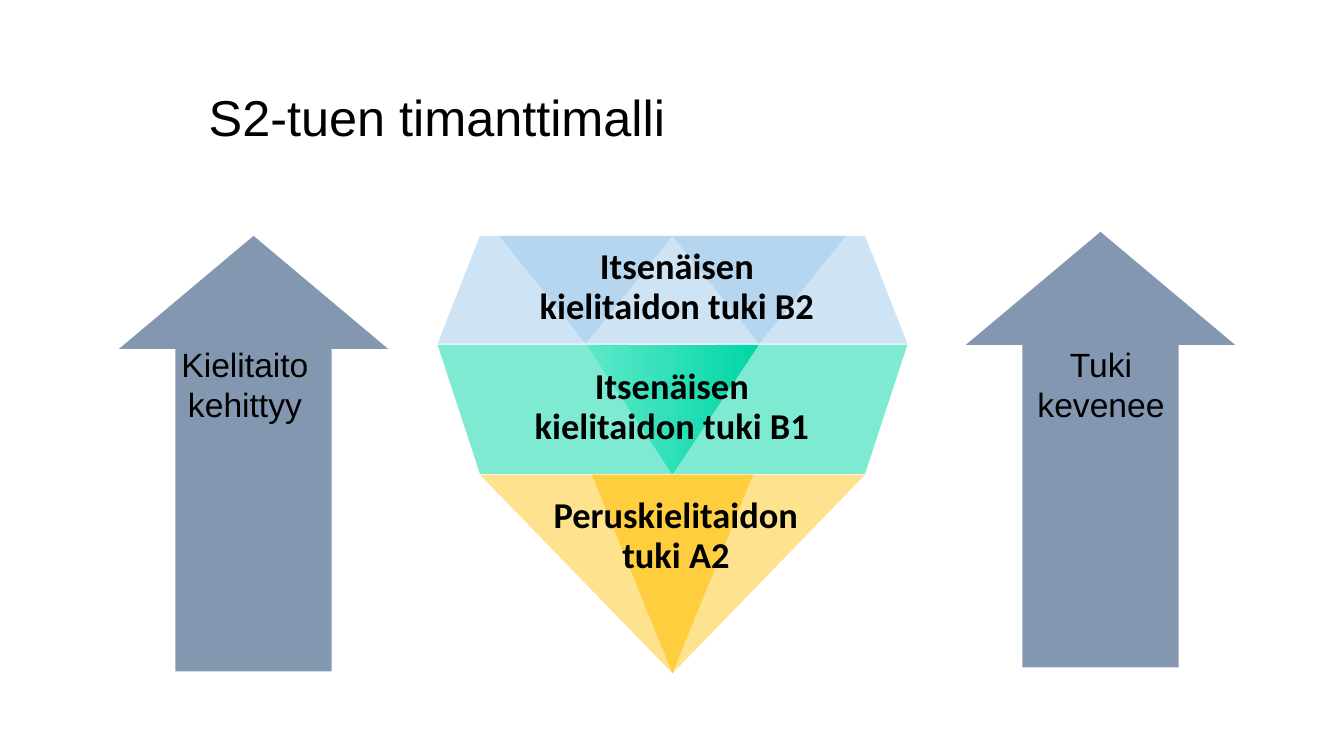
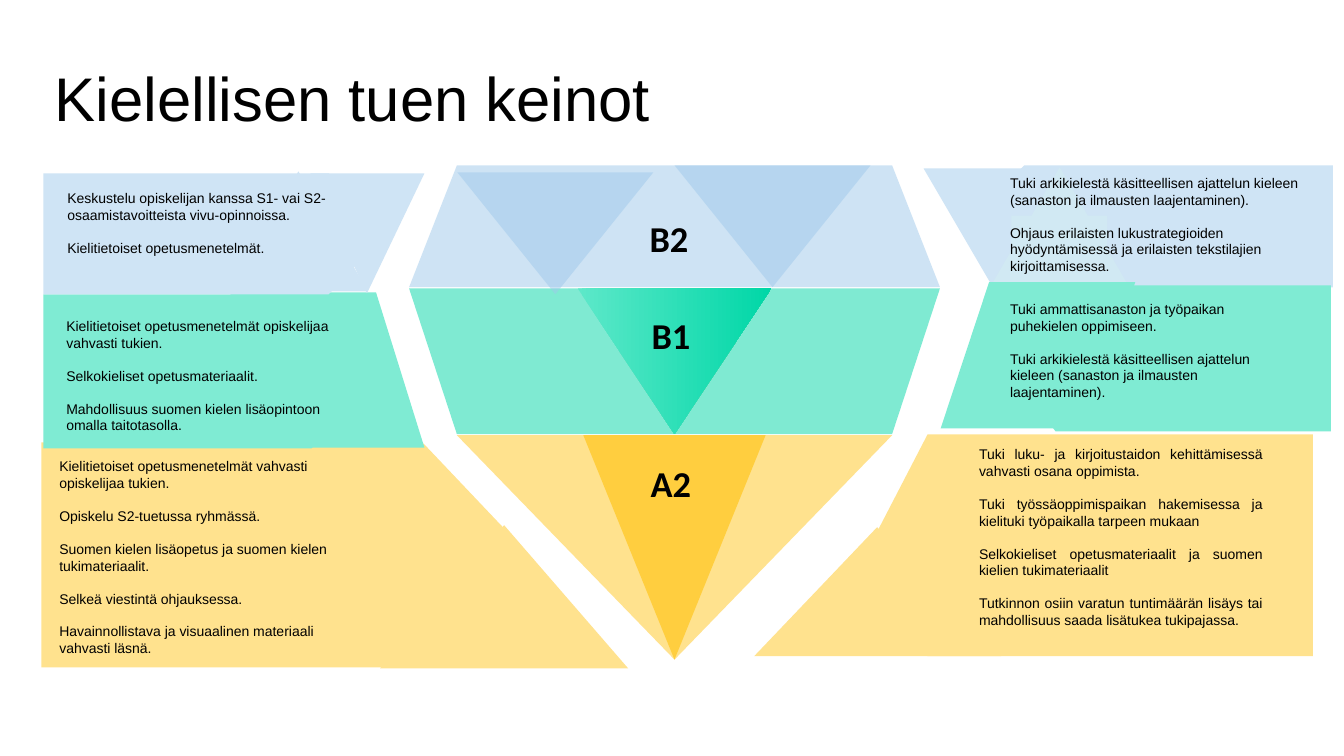
import pptx
import pptx.util
import pptx.dml.color
import pptx.enum.shapes
import pptx.enum.text
import pptx.oxml
import pptx.oxml.ns

Inches, Pt = pptx.util.Inches, pptx.util.Pt
RGB = pptx.dml.color.RGBColor
SHAPE = pptx.enum.shapes.MSO_SHAPE
ALIGN = pptx.enum.text.PP_ALIGN
ANCHOR = pptx.enum.text.MSO_ANCHOR

# Colours
BLACK = RGB(0x00, 0x00, 0x00)
STEEL = RGB(0x84, 0x97, 0xB0)
GOLD = RGB(0xFF, 0xC6, 0x1E)
GREEN = RGB(0x00, 0xD7, 0xA7)
LIME = RGB(0x5D, 0xE8, 0xC9)
BLUE = RGB(0x9F, 0xC9, 0xEB)
CREAM = RGB(0xFF, 0xE2, 0x8E)
MINT = RGB(0x7F, 0xEB, 0xD3)
SKY = RGB(0xCF, 0xE4, 0xF5)
ICE = RGB(0xD1, 0xE9, 0xF3)


def paint(shape, color, alpha=100):
    """Give a shape a flat fill without line or shadow."""
    shape.shadow.inherit = False
    shape.line.fill.background()
    shape.fill.solid()
    shape.fill.fore_color.rgb = color
    if alpha < 100:
        tint = shape.fill._xPr.find(".//" + pptx.oxml.ns.qn("a:srgbClr"))
        tint.append(pptx.oxml.parse_xml(
            f'<a:alpha {pptx.oxml.ns.nsdecls("a")} val="{alpha * 1000}"/>'))


def write(slide, box, lines, size, font="Arial", bold=False, align=ALIGN.LEFT,
          inset=(0.1, 0.05), pitch=None, gap=0):
    """Add a text box with one paragraph per line."""
    frame = slide.shapes.add_textbox(*map(Inches, box)).text_frame
    frame.word_wrap = True
    frame.margin_left = frame.margin_right = Inches(inset[0])
    frame.margin_top = frame.margin_bottom = Inches(inset[1])
    frame.text = "\n".join(lines)
    for i, para in enumerate(frame.paragraphs):
        para.alignment = align
        if pitch:
            para.line_spacing = Pt(pitch)
        if i:
            para.space_before = Pt(gap)
        for run in para.runs:
            run.font.name, run.font.size = font, Pt(size)
            run.font.bold, run.font.color.rgb = bold, BLACK


deck = pptx.Presentation()
deck.slide_width, deck.slide_height = Inches(13.33), Inches(7.5)

# Titles
pages = []
for text, left, top, size in [("S2-tuen timanttimalli", 1.97, 0.47, 36),
                              ("Kielellisen tuen keinot", 0.44, 0.28, 44)]:
    slide = deck.slides.add_slide(deck.slide_layouts[5])
    pages.append(slide)
    title = slide.shapes.title
    title.left, title.top = Inches(left), Inches(top)
    title.width, title.height = Inches(11.5), Inches(1.45)
    frame = title.text_frame
    frame.text = text
    frame.auto_size = pptx.enum.text.MSO_AUTO_SIZE.NONE
    frame.vertical_anchor = ANCHOR.MIDDLE
    para = frame.paragraphs[0]
    para.alignment, para.line_spacing = ALIGN.LEFT, 0.9
    font = para.runs[0].font
    font.name, font.size, font.color.rgb = "Arial", Pt(size), BLACK
model, means = pages

# Diamond facets, measured from the middle of the top edge
facets = [
    (GOLD, 50, [(0, 4.34), (1.91, 2.37), (-1.91, 2.37)]),
    (GOLD, 70, [(0, 4.34), (0.8, 2.37), (-0.8, 2.37)]),
    (GREEN, 50, [(0.43, 1.08), (2.33, 1.08), (1.91, 2.36), (0, 2.36)]),
    (GREEN, 50, [(-0.43, 1.08), (-2.33, 1.08), (-1.91, 2.36), (0, 2.36)]),
    (GREEN, 100, [(0, 2.36), (0.85, 1.08), (-0.85, 1.08)]),
    (BLUE, 50, [(-1.91, 0), (1.91, 0), (2.33, 1.07), (-2.33, 1.07)]),
    (BLUE, 50, [(0.86, 1.07), (1.72, 0), (0, 0)]),
    (BLUE, 50, [(-0.86, 1.07), (0, 0), (-1.72, 0)]),
]

# Means slide: side panels, from back to front
panels = [
    (CREAM, [(9.2, 6.51), (13.02, 6.51), (13.02, 4.31), (9.2, 4.31), (8.63, 5.41)]),
    (CREAM, [(8.7, 5.23), (9.93, 6.51), (7.48, 6.51)]),
    (CREAM, [(9.29, 5.23), (10.4, 6.39), (8.18, 6.39)]),
    (CREAM, [(4.15, 4.39), (0.41, 4.39), (0.41, 6.62), (4.15, 6.62), (4.87, 5.5)]),
    (CREAM, [(5, 5.21), (6.23, 6.63), (3.77, 6.63)]),
    (CREAM, [(4.2, 4.4), (5.3, 5.56), (3.09, 5.56)]),
    (MINT, [(3.73, 2.9), (2.28, 2.9), (2.76, 4.44), (4.21, 4.44)]),
    (MINT, [(3.09, 2.92), (0.43, 2.92), (0.43, 4.45), (3.09, 4.45), (3.71, 3.69)]),
    (SKY, [(3.64, 2.91), (4.21, 1.72), (3.08, 1.72)]),
    (SKY, [(3.26, 1.72), (0.43, 1.72), (0.43, 2.92), (3.26, 2.92), (3.82, 2.32)]),
    (SKY, [(2.96, 1.7), (3.65, 2.89), (2.28, 2.89)]),
    (SKY, [(10.16, 2.85), (13.22, 2.85), (13.22, 1.64), (10.16, 1.64), (9.55, 2.25)]),
    (SKY, [(9.86, 2.87), (10.56, 1.67), (9.16, 1.67)]),
    (ICE, [(10.51, 1.66), (11.2, 2.85), (9.82, 2.85)]),
    (MINT, [(9.81, 2.8), (11.26, 2.8), (10.77, 4.25), (9.33, 4.25)]),
    (MINT, [(10.47, 4.28), (13.2, 4.28), (13.2, 2.83), (10.47, 2.83), (9.92, 3.56)]),
]

# Place the facets on both slides; the last one sits apart on the second
plan = []
for slide, mid, top, scale, shift in [(model, 6.67, 2.34, 1, (0, 0)),
                                      (means, 6.69, 1.64, 1.13, (-0.21, 0.07))]:
    for n, (color, alpha, points) in enumerate(facets, 1):
        dx, dy = shift if n == len(facets) else (0, 0)
        spots = [(mid + dx + x * scale, top + dy + y * scale) for x, y in points]
        plan.append((slide, color, alpha, spots))
plan += [(means, color, 100, points) for color, points in panels]

# Draw facets and panels
for slide, color, alpha, points in plan:
    spots = [(Inches(x), Inches(y)) for x, y in points]
    pen = slide.shapes.build_freeform(*spots[0])
    pen.add_line_segments(spots[1:], close=True)
    shape = pen.convert_to_shape()
    paint(shape, color, alpha)
    if color == GREEN and alpha == 100:
        shape.fill.gradient()
        shape.fill.gradient_angle = 0
        for stop, tone in zip(shape.fill.gradient_stops, (LIME, GREEN)):
            stop.color.rgb = tone
    if color == ICE:
        base = slide.shapes.add_shape(SHAPE.RECTANGLE, Inches(10.03), Inches(2.14),
                                      Inches(0.95), Inches(0.62))
        paint(base, ICE)

# Diamond labels
for slide, left, top, lines in [
        (model, 5.16, 4.92, ["Peruskielitaidon", "tuki A2"]),
        (model, 5.17, 2.45, ["Itsenäisen kielitaidon tuki B2"]),
        (model, 5.12, 3.64, ["Itsenäisen kielitaidon tuki B1"]),
        (means, 5.11, 4.61, ["A2"]),
        (means, 5.11, 3.14, ["B1"]),
        (means, 5.09, 2.18, ["B2"])]:
    write(slide, (left, top, 3.09, 0.41 * (1 if slide is means else 2)), lines, 26,
          "Calibri", True, ALIGN.CENTER, (0, 0), 28.5)

# Model slide: arrows
for left, top, edge, lines in [(9.58, 2.3, 10.02, ["Tuki", "kevenee"]),
                               (1.18, 2.34, 1.53, ["Kielitaito", "kehittyy"])]:
    arrow = model.shapes.add_shape(SHAPE.UP_ARROW, Inches(left), Inches(top),
                                   Inches(2.67), Inches(4.32))
    arrow.adjustments[0], arrow.adjustments[1] = 0.58, 0.42
    paint(arrow, STEEL)
    write(model, (edge, 3.42, 1.8, 0.79), lines, 24, align=ALIGN.CENTER,
          inset=(0, 0), pitch=28.5)

# Means slide: panel texts
for box, lines in [
        ((0.57, 1.83, 3, 0.94), [
            "Keskustelu opiskelijan kanssa S1- vai S2-osaamistavoitteista vivu-opinnoissa.",
            "Kielitietoiset opetusmenetelmät."]),
        ((9.92, 1.68, 3.19, 1.11), [
            "Tuki arkikielestä käsitteellisen ajattelun kieleen (sanaston ja ilmausten laajentaminen).",
            "Ohjaus erilaisten lukustrategioiden hyödyntämisessä ja erilaisten tekstilajien kirjoittamisessa."]),
        ((0.56, 3.1, 2.86, 1.3), [
            "Kielitietoiset opetusmenetelmät opiskelijaa vahvasti tukien.",
            "Selkokieliset opetusmateriaalit.",
            "Mahdollisuus suomen kielen lisäopintoon omalla taitotasolla."]),
        ((0.49, 4.49, 3, 2.12), [
            "Kielitietoiset opetusmenetelmät vahvasti opiskelijaa tukien.",
            "Opiskelu S2-tuetussa ryhmässä.",
            "Suomen kielen lisäopetus ja suomen kielen tukimateriaalit.",
            "Selkeä viestintä ohjauksessa.",
            "Havainnollistava ja visuaalinen materiaali vahvasti läsnä."]),
        ((9.92, 2.93, 3, 1.11), [
            "Tuki ammattisanaston ja työpaikan puhekielen oppimiseen.",
            "Tuki arkikielestä käsitteellisen ajattelun kieleen (sanaston ja ilmausten laajentaminen)."])]:
    write(means, box, lines, 10, gap=11.5)
write(means, (9.67, 4.38, 2.89, 1.95), [
    "Tuki luku- ja kirjoitustaidon kehittämisessä vahvasti osana oppimista.",
    "Tuki työssäoppimispaikan hakemisessa ja kielituki työpaikalla tarpeen mukaan",
    "Selkokieliset opetusmateriaalit ja suomen kielien tukimateriaalit",
    "Tutkinnon osiin varatun tuntimäärän lisäys tai mahdollisuus saada lisätukea tukipajassa."],
    10, align=ALIGN.JUSTIFY, inset=(0.04, 0.04), gap=11.5)

deck.save("out.pptx")
